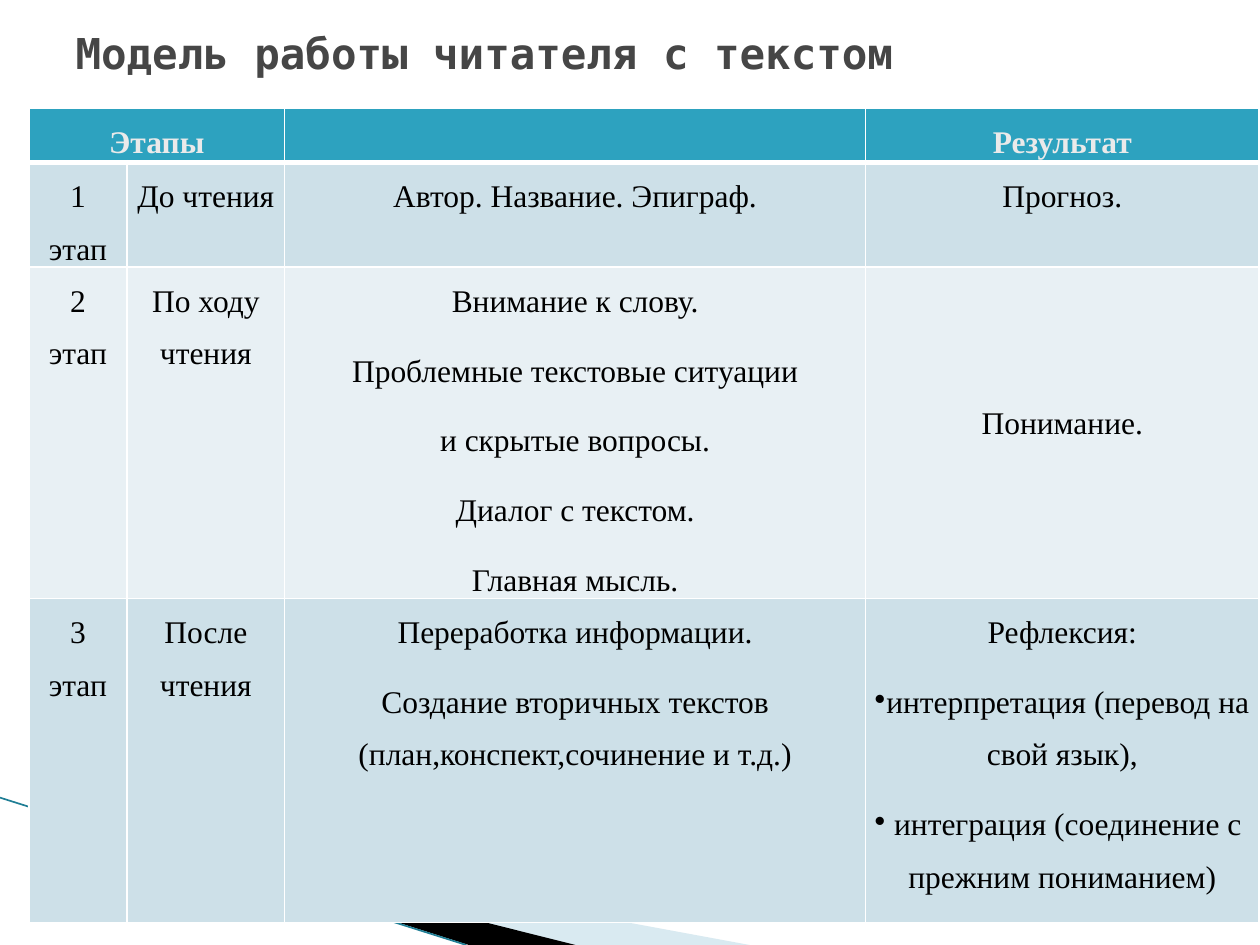
from lxml import etree
from pptx import Presentation
from pptx.dml.color import RGBColor
from pptx.enum.shapes import MSO_CONNECTOR
from pptx.enum.text import MSO_ANCHOR, PP_ALIGN
from pptx.oxml.ns import qn
from pptx.util import Cm, Pt

CENTER, LEFT = PP_ALIGN.CENTER, PP_ALIGN.LEFT
TOP = MSO_ANCHOR.TOP
STRAIGHT = MSO_CONNECTOR.STRAIGHT
COLORS = {
    "header": "2DA2BF", "odd": "CDE0E8", "even": "E8F0F4", "border": "FFFFFF",
    "header_text": "EAEAEA", "text": "000000", "title": "464646",
    "wave": "A0CBDC", "shadow": "000000", "line": "1F7E95",
}
COLUMNS = [1.98, 3.18, 11.71, 7.93]
ROWS = [1.09, 2.03, 6.6, 6.53]
CONTENT = [
    [["Этапы"], [], [], ["Результат"]],
    [["1 этап"], ["До чтения"], ["Автор. Название. Эпиграф."], ["Прогноз."]],
    [["2 этап"], ["По ходу чтения"],
     ["Внимание к слову.", "Проблемные текстовые ситуации",
      "и скрытые вопросы.", "Диалог с текстом.", "Главная мысль."],
     ["Понимание."]],
    [["3 этап"], ["После чтения"],
     ["Переработка информации.",
      "Создание вторичных текстов (план,конспект,сочинение и т.д.)"],
     ["Рефлексия:", "•интерпретация (перевод на свой язык),",
      "•интеграция (соединение с прежним пониманием)"]],
]
CELL_FORMAT = {"margin_left": Cm(0.18), "margin_right": Cm(0.18),
               "margin_top": 0, "margin_bottom": 0, "vertical_anchor": TOP}
PARA_FORMAT = {"alignment": CENTER, "line_spacing": 1.5, "space_after": Pt(10)}


def color(name):
    """Return the named colour."""
    return RGBColor.from_string(COLORS[name])


def apply(target, values):
    """Set every attribute in values on target."""
    for name, value in values.items():
        setattr(target, name, value)


def add_wave(page, points, fill, opacity=100):
    """Draw a filled outline through points given in centimetres."""
    corners = [(Cm(x), Cm(y)) for x, y in points]
    builder = page.shapes.build_freeform(*corners[0])
    builder.add_line_segments(corners[1:], close=True)
    shape = builder.convert_to_shape()
    shape.shadow.inherit = False
    shape.line.fill.background()
    shape.fill.solid()
    shape.fill.fore_color.rgb = color(fill)
    if opacity < 100:
        tone = next(shape.element.spPr.iter(qn("a:srgbClr")))
        etree.SubElement(tone, qn("a:alpha"), val=str(opacity * 1000))


def add_line(page, start, end):
    """Draw a thin straight line without shadow."""
    points = [Cm(value) for value in (*start, *end)]
    line = page.shapes.add_connector(STRAIGHT, *points)
    apply(line.line, {"width": Pt(0.95)})
    line.line.color.rgb = color("line")
    etree.SubElement(line.element.spPr, qn("a:effectLst"))


def set_borders(cell, widths):
    """Add borders with the given width in points for each side."""
    properties = cell._tc.get_or_add_tcPr()
    for side, width in widths.items():
        border = etree.SubElement(properties, qn(f"a:ln{side}"), w=str(Pt(width)))
        fill = etree.SubElement(border, qn("a:solidFill"))
        etree.SubElement(fill, qn("a:srgbClr"), val=COLORS["border"])


def write_cell(cell, texts, header):
    """Write centred paragraphs, with a bullet where the text begins with one."""
    frame = cell.text_frame
    for index, text in enumerate(texts):
        para = frame.add_paragraph() if index else frame.paragraphs[0]
        apply(para, PARA_FORMAT)
        if text.startswith("•"):
            properties = para._p.get_or_add_pPr()
            etree.SubElement(properties, qn("a:buChar"), char="•")
        span = para.add_run()
        span.text = text.lstrip("•")
        apply(span.font, {"name": "Times New Roman", "size": Pt(18), "bold": header})
        span.font.color.rgb = color("header_text" if header else "text")


def add_stage_table(page):
    """Add the table of reading stages."""
    table = page.shapes.add_table(
        len(ROWS), len(COLUMNS), Cm(0.58), Cm(2.18),
        Cm(sum(COLUMNS)), Cm(sum(ROWS))).table
    for column, width in zip(table.columns, COLUMNS):
        column.width = Cm(width)
    for number, (row, height) in enumerate(zip(table.rows, ROWS)):
        row.height = Cm(height)
        header = number == 0
        fill = "header" if header else ("even", "odd")[number % 2]
        widths = {"L": 1, "R": 1, "T": 3 if number == 1 else 1, "B": 3 if header else 1}
        for cell, texts in zip(row.cells, CONTENT[number]):
            apply(cell, CELL_FORMAT)
            set_borders(cell, widths)
            cell.fill.solid()
            cell.fill.fore_color.rgb = color(fill)
            write_cell(cell, texts, header)
    table.cell(0, 0).merge(table.cell(0, 1))
    table.cell(2, 3).margin_top = Cm(2.46)


def write_title(page, text):
    """Move and format the title placeholder."""
    title = page.shapes.title
    apply(title, {"left": Cm(1.27), "top": Cm(0.41), "width": Cm(22.86), "height": Cm(2)})
    apply(title.text_frame, {"vertical_anchor": TOP, "word_wrap": True})
    para = title.text_frame.paragraphs[0]
    para.alignment = LEFT
    span = para.add_run()
    span.text = text
    apply(span.font, {"name": "DejaVu Sans Mono", "size": Pt(24.3), "bold": True})
    span.font.color.rgb = color("title")


def main():
    """Build and save the slide."""
    deck = Presentation()
    apply(deck, {"slide_width": Cm(25.4), "slide_height": Cm(19.05)})
    page = deck.slides.add_slide(deck.slide_layouts[5])
    add_wave(page, [(1.4, 16.52), (15.11, 19.05), (11.58, 19.05)], "wave", 40)
    add_wave(page, [(1.35, 16.48), (11.6, 19.05), (9.45, 19.05)], "shadow")
    add_line(page, (0, 16.08), (9.4, 19.05))
    add_stage_table(page)
    write_title(page, "Модель работы читателя с текстом")
    deck.save("out.pptx")


if __name__ == "__main__":
    main()
